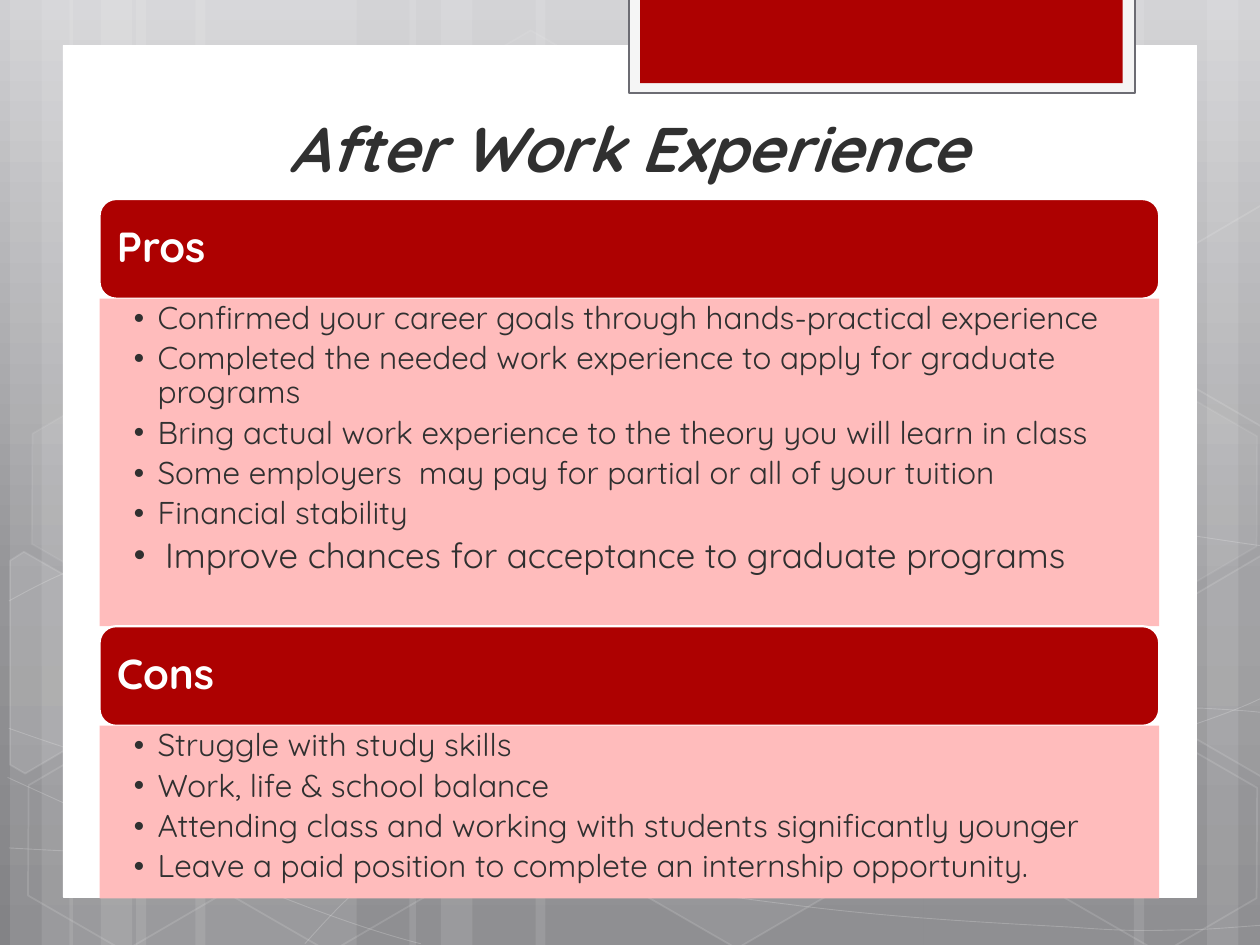
import lxml.etree as etree
import pptx
import pptx.dml.color
import pptx.enum.shapes
import pptx.enum.text
import pptx.oxml.ns
import pptx.util

KIND = pptx.enum.shapes.MSO_SHAPE
ALIGN = pptx.enum.text.PP_ALIGN
ANCHOR = pptx.enum.text.MSO_ANCHOR
Pt = pptx.util.Pt
qn = pptx.oxml.ns.qn

THEME = {
    "font": "Quicksand", "title": 36, "head": 24, "body": 18, "big": 20,
    "white": "FFFFFF", "ink": "303030", "red": "AD0101", "pink": "FFBCBC",
    "pale": "F5F5F5", "edge": "6C6C73",
    "back": [(0, "CFCFD2"), (62, "959598"), (100, "838386")],
}

TITLE = "After Work Experience"
# Heading, body height, points as (text, size, indent); lengths in inches
PARTS = [
    ("Pros", 2.6, [
        ("Confirmed your career goals through hands-practical experience", "body", 0.19),
        ("Completed the needed work experience to apply for graduate programs", "body", 0.19),
        ("Bring actual work experience to the theory you will learn in class", "body", 0.19),
        ("Some employers  may pay for partial or all of your tuition", "body", 0.19),
        ("Financial stability", "body", 0.19),
        ("Improve chances for acceptance to graduate programs", "big", 0.25),
    ]),
    ("Cons", 1.37, [
        ("Struggle with study skills", "body", 0.19),
        ("Work, life & school balance", "body", 0.19),
        ("Attending class and working with students significantly younger", "body", 0.19),
        ("Leave a paid position to complete an internship opportunity.", "body", 0.19),
    ]),
]

# Left and width of each full-height stripe
STRIPES = [
    (1.08, 1.75), (0.08, 0.5), (0.33, 0.83), (1.55, 1.75), (0.55, 0.5), (0.8, 0.83),
    (7.33, 1.75), (9.58, 0.5), (9, 0.83), (4.25, 3.08), (3.25, 0.5), (3.5, 0.83),
]
# Chains of cubic curves: a start, then three points for each curve
WAVES = [
    [(0.07, 6.73), (0.61, 6.76), (1.15, 6.79), (1.9, 6.78), (2.65, 6.77), (3.58, 6.75),
     (4.58, 6.65), (5.58, 6.55), (7, 6.36), (7.92, 6.17), (8.83, 5.98), (9.77, 5.68),
     (10.07, 5.51)],
    [(0.07, 4.77), (0.36, 4.61), (0.65, 4.46), (1.21, 4.31), (1.78, 4.16), (2.59, 3.94),
     (3.47, 3.87), (4.36, 3.8), (5.44, 3.79), (6.54, 3.87), (7.64, 3.95), (9.47, 4.26),
     (10.07, 4.34)],
    [(0.06, 6.17), (1.27, 6.72), (2.47, 7.27), (3.34, 7.49)],
    [(0.07, 5.78), (0.38, 5.89), (0.7, 6), (1.28, 6.16), (1.86, 6.31), (2.73, 6.56),
     (3.57, 6.73), (4.4, 6.9), (5.45, 7.08), (6.28, 7.18), (7.11, 7.29), (8, 7.33),
     (8.53, 7.36), (9.05, 7.4), (9.19, 7.38), (9.45, 7.38), (9.71, 7.37), (9.89, 7.35),
     (10.07, 7.34)],
    [(2.42, 7.49), (2.6, 7.29), (2.78, 7.09), (3.02, 6.91), (3.26, 6.73), (3.6, 6.53),
     (3.88, 6.39), (4.16, 6.25), (4.33, 6.19), (4.7, 6.09), (5.06, 5.99), (5.73, 5.85),
     (6.08, 5.78), (6.44, 5.71), (6.49, 5.71), (6.8, 5.69), (7.11, 5.66), (7.6, 5.63),
     (7.94, 5.62), (8.29, 5.61), (8.86, 5.62), (8.86, 5.62), (9.08, 5.62), (9.31, 5.62),
     (9.53, 5.62), (9.71, 5.63), (9.88, 5.64), (9.97, 5.65), (10.06, 5.66), (10.03, 5.65),
     (10.06, 5.66)],
]
# Left, top, fill opacity (0 is none), line opacity
HEXES = [
    (3.34, 0.36, 4, 8), (4.97, 5.89, 6, 12), (0.11, 5.91, 0, 12), (0.14, 3.12, 7, 8),
    (1.74, 5.92, 0, 12), (7.53, 4.53, 10, 12), (8.34, 5.93, 0, 12), (8.34, 3.14, 7, 8),
]
# Hexagons cut by the slide edge: points, fill opacity
CUTS = [
    ([(0.08, 4.45), (0.19, 4.38), (0.96, 4.82), (0.95, 5.7), (0.2, 6.14), (0.08, 6.07)], 10),
    ([(9.26, 4.85), (10.01, 4.41), (10.09, 4.46), (10.09, 6.13), (10.02, 6.17), (9.26, 5.73)], 4),
    ([(9.26, 2.07), (10.01, 1.63), (10.1, 1.68), (10.09, 3.35), (10.02, 3.39), (9.26, 2.95)], 0),
]


def size(inch):
    return pptx.util.Cm(inch * 2.54)


def tint(color, name):
    color.rgb = pptx.dml.color.RGBColor.from_string(THEME[name])


def fade(node, part):
    """Set the opacity, in percent, of the solid colour under node."""
    color = node.find(qn("a:solidFill")).find(qn("a:srgbClr"))
    etree.SubElement(color, qn("a:alpha"), val=str(part * 1000))


def paint(shape, fill=None, line=None, width=1, see=100, rim=100):
    """Fill and outline a shape; see and rim are opacities in percent."""
    shape.shadow.inherit = False
    if fill and see:
        shape.fill.solid()
        tint(shape.fill.fore_color, fill)
        if see < 100:
            fade(shape.element.spPr, see)
    else:
        shape.fill.background()
    if line:
        tint(shape.line.color, line)
        shape.line.width = Pt(width)
        if rim < 100:
            fade(shape.element.spPr.find(qn("a:ln")), rim)
    else:
        shape.line.fill.background()
    return shape


def block(slide, kind, box, **look):
    return paint(slide.shapes.add_shape(kind, *map(size, box)), **look)


def trace(slide, points, close, **look):
    spots = [(size(x), size(y)) for x, y in points]
    pen = slide.shapes.build_freeform(*spots[0])
    pen.add_line_segments(spots[1:], close=close)
    return paint(pen.convert_to_shape(), **look)


def bend(shape):
    """Turn each three straight steps of an outline into one cubic curve."""
    route = next(shape.element.iter(qn("a:path")))
    steps = route.findall(qn("a:lnTo"))
    for i in range(0, len(steps), 3):
        curve = etree.SubElement(route, qn("a:cubicBezTo"))
        for step in steps[i:i + 3]:
            curve.append(step[0])
            route.remove(step)


def frame(shape, anchor, left, top, right):
    text = shape.text_frame
    text.word_wrap = True
    text.vertical_anchor = anchor
    text.margin_left, text.margin_right = size(left), size(right)
    text.margin_top = text.margin_bottom = size(top)
    return text


def write(para, words, points, color, bold=False, italic=False, align=ALIGN.LEFT):
    para.text = words
    para.alignment = align
    font = para.font
    font.name, font.size = THEME["font"], Pt(THEME[points])
    font.bold, font.italic = bold, italic
    tint(font.color, color)


def bullet(para, indent):
    props = para._p.get_or_add_pPr()
    props.set("marL", str(size(indent)))
    props.set("indent", str(-size(indent)))
    etree.SubElement(props, qn("a:buFont"), typeface=THEME["font"])
    etree.SubElement(props, qn("a:buChar"), char="•")


def backdrop(slide):
    fill = slide.background.fill
    fill.gradient()
    fill.gradient_angle = 270
    stops = next(slide.element.iter(qn("a:gsLst")))
    stops.clear()
    for place, color in THEME["back"]:
        stop = etree.SubElement(stops, qn("a:gs"), pos=str(place * 1000))
        etree.SubElement(stop, qn("a:srgbClr"), val=color)
    for left, width in STRIPES:
        block(slide, KIND.RECTANGLE, (left, 0, width, 7.5), fill="white", see=10)
    for chain in WAVES:
        bend(trace(slide, chain, False, line="white", width=0.5, rim=20))
    for left, top, see, rim in HEXES:
        hexa = block(slide, KIND.HEXAGON, (left, top, 1.75, 1.52),
                     fill="white", line="white", see=see, rim=rim)
        hexa.adjustments[0] = 0.285
        hexa.rotation = 30
    for points, see in CUTS:
        trace(slide, points, True, fill="white", line="white", see=see, rim=12)


def card(slide):
    block(slide, KIND.RECTANGLE, (0.5, 0.36, 9, 6.76), fill="white", line="white", width=0.5)
    block(slide, KIND.RECTANGLE, (4.99, -0.02, 4.02, 0.76), fill="pale", line="edge", width=1.25)
    block(slide, KIND.RECTANGLE, (5.08, -0.02, 3.83, 0.68), fill="red")
    title = slide.shapes.add_textbox(*map(size, (0.5, 0.82, 8.98, 0.69)))
    text = frame(title, ANCHOR.MIDDLE, 0.1, 0.05, 0.1)
    write(text.paragraphs[0], TITLE, "title", "ink", True, True, ALIGN.CENTER)


def lists(slide, left=0.79, top=1.58, width=8.41, head=0.79):
    for name, tall, points in PARTS:
        bar = block(slide, KIND.ROUNDED_RECTANGLE, (left, top, width, head),
                    fill="red", line="white", width=1.25)
        para = frame(bar, ANCHOR.MIDDLE, 0.1, 0.1, 0.1).paragraphs[0]
        para.line_spacing = 0.9
        write(para, name, "head", "white", bold=True)
        top += head
        body = block(slide, KIND.RECTANGLE, (left, top, width, tall), fill="pink")
        text = frame(body, ANCHOR.TOP, 0.27, 0.03, 0.14)
        for i, (words, points_size, indent) in enumerate(points):
            para = text.add_paragraph() if i else text.paragraphs[0]
            para.line_spacing, para.space_after = 0.9, Pt(3.6)
            bullet(para, indent)
            write(para, words, points_size, "ink")
        top += tall


def main():
    deck = pptx.Presentation()
    deck.slide_width, deck.slide_height = size(10), size(7.5)
    slide = deck.slides.add_slide(deck.slide_layouts[6])
    backdrop(slide)
    card(slide)
    lists(slide)
    deck.save("out.pptx")


if __name__ == "__main__":
    main()
